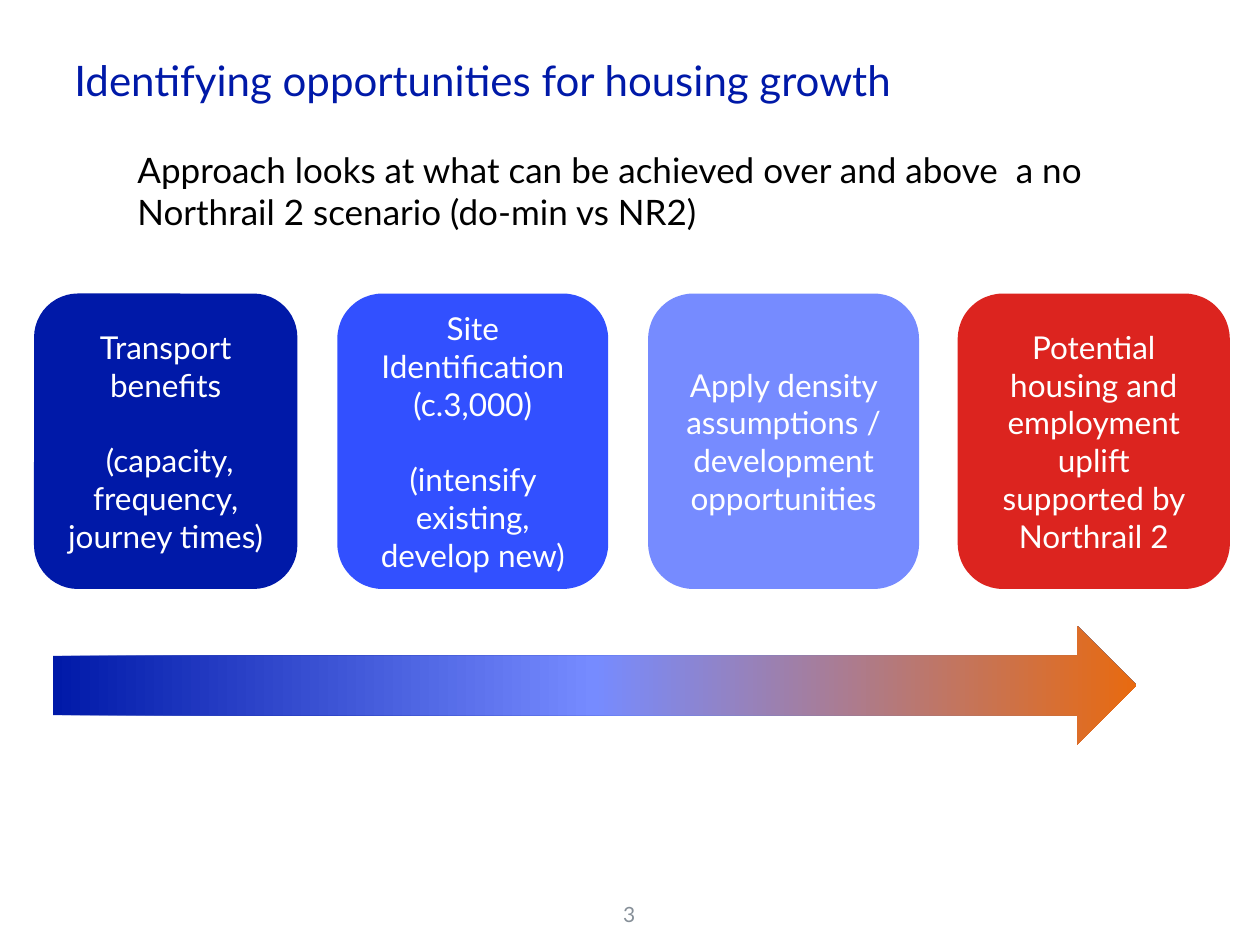
from copy import deepcopy
from dataclasses import dataclass

from pptx import Presentation
from pptx.dml.color import RGBColor
from pptx.enum.shapes import MSO_SHAPE
from pptx.enum.text import MSO_ANCHOR, PP_ALIGN
from pptx.oxml.ns import qn
from pptx.util import Inches, Pt


@dataclass(frozen=True)
class Theme:
    font: str = "Lato"
    navy: str = "0019A8"
    blue: str = "3250FF"
    periwinkle: str = "768BFF"
    red: str = "DC241F"
    orange: str = "E86A10"
    white: str = "FFFFFF"
    black: str = "000000"
    grey: str = "868F98"
    title_size: int = 24
    lead_size: int = 20
    step_size: int = 18
    number_size: int = 12
    step_gap: float = 21.6


class SlideBuilder:
    """Draws styled elements on a slide ruled in 100 columns by 75 rows."""

    COLUMNS, ROWS = 100, 75

    def __init__(self, deck, theme):
        self.theme = theme
        self.slide = deck.slides.add_slide(deck.slide_layouts[6])
        self.column = deck.slide_width / self.COLUMNS
        self.row = deck.slide_height / self.ROWS

    def place(self, left, top, width, height):
        return (round(left * self.column), round(top * self.row),
                round(width * self.column), round(height * self.row))

    def set_text(self, frame, paragraphs, size, color, align, anchor, margins=(0, 0)):
        frame.word_wrap = True
        frame.vertical_anchor = anchor
        frame.margin_left = frame.margin_right = Inches(margins[0])
        frame.margin_top = frame.margin_bottom = Inches(margins[1])
        for index, wording in enumerate(paragraphs):
            paragraph = frame.add_paragraph() if index else frame.paragraphs[0]
            paragraph.text = wording
            paragraph.alignment = align
            paragraph.space_before = Pt(self.theme.step_gap if index else 0)
            paragraph.font.name = self.theme.font
            paragraph.font.size = Pt(size)
            paragraph.font.color.rgb = RGBColor.from_string(color)

    def label(self, area, wording, size, color,
              align=PP_ALIGN.LEFT, anchor=MSO_ANCHOR.MIDDLE):
        frame = self.slide.shapes.add_textbox(*self.place(*area)).text_frame
        self.set_text(frame, [wording], size, color, align, anchor)

    def block(self, preset, area):
        shape = self.slide.shapes.add_shape(preset, *self.place(*area))
        shape.shadow.inherit = False
        shape.line.fill.background()
        return shape

    def step(self, area, paragraphs, color):
        card = self.block(MSO_SHAPE.ROUNDED_RECTANGLE, area)
        card.fill.solid()
        card.fill.fore_color.rgb = RGBColor.from_string(color)
        self.set_text(card.text_frame, paragraphs, self.theme.step_size, self.theme.white,
                      PP_ALIGN.CENTER, MSO_ANCHOR.MIDDLE, (0.16, 0.12))

    def gradient_arrow(self, area, colors):
        arrow = self.block(MSO_SHAPE.RIGHT_ARROW, area)
        arrow.fill.gradient()
        arrow.fill.gradient_angle = 0
        stop_list = arrow._element.spPr.find(qn("a:gradFill")).find(qn("a:gsLst"))
        while len(stop_list) < len(colors):
            stop_list.append(deepcopy(stop_list[0]))
        for index, (stop, color) in enumerate(zip(arrow.fill.gradient_stops, colors)):
            stop.position = index / (len(colors) - 1)
            stop.color.rgb = RGBColor.from_string(color)


def main():
    deck = Presentation()
    deck.slide_width, deck.slide_height = Inches(10), Inches(7.5)
    theme = Theme()
    page = SlideBuilder(deck, theme)

    page.label((5.9, 0, 88.2, 12.6), "Identifying opportunities for housing growth",
               theme.title_size, theme.navy)
    page.label((10.9, 11.8, 83.2, 9.1),
               "Approach looks at what can be achieved over and above  a no "
               "Northrail 2 scenario (do-min vs NR2)",
               theme.lead_size, theme.black, anchor=MSO_ANCHOR.TOP)

    steps = [
        (20.9, theme.navy, ["Transport benefits",
                            " (capacity, frequency, journey times)"]),
        (21.5, theme.blue, ["Site Identification (c.3,000)",
                            "(intensify existing, develop new)"]),
        (21.5, theme.periwinkle,
         ["Apply density assumptions / development opportunities"]),
        (21.6, theme.red,
         ["Potential housing and employment uplift supported by Northrail 2"]),
    ]
    first_right, pitch = 23.6, 24.67
    for index, (width, color, paragraphs) in enumerate(steps):
        right = first_right + index * pitch
        page.step((right - width, 23.3, width, 23.45), paragraphs, color)

    page.gradient_arrow((4.2, 49.7, 86, 9.4),
                        [theme.navy, theme.periwinkle, theme.orange])
    page.label((38.3, 70.3, 23.3, 4.5), "3", theme.number_size, theme.grey,
               PP_ALIGN.CENTER)
    deck.save("out.pptx")


if __name__ == "__main__":
    main()
